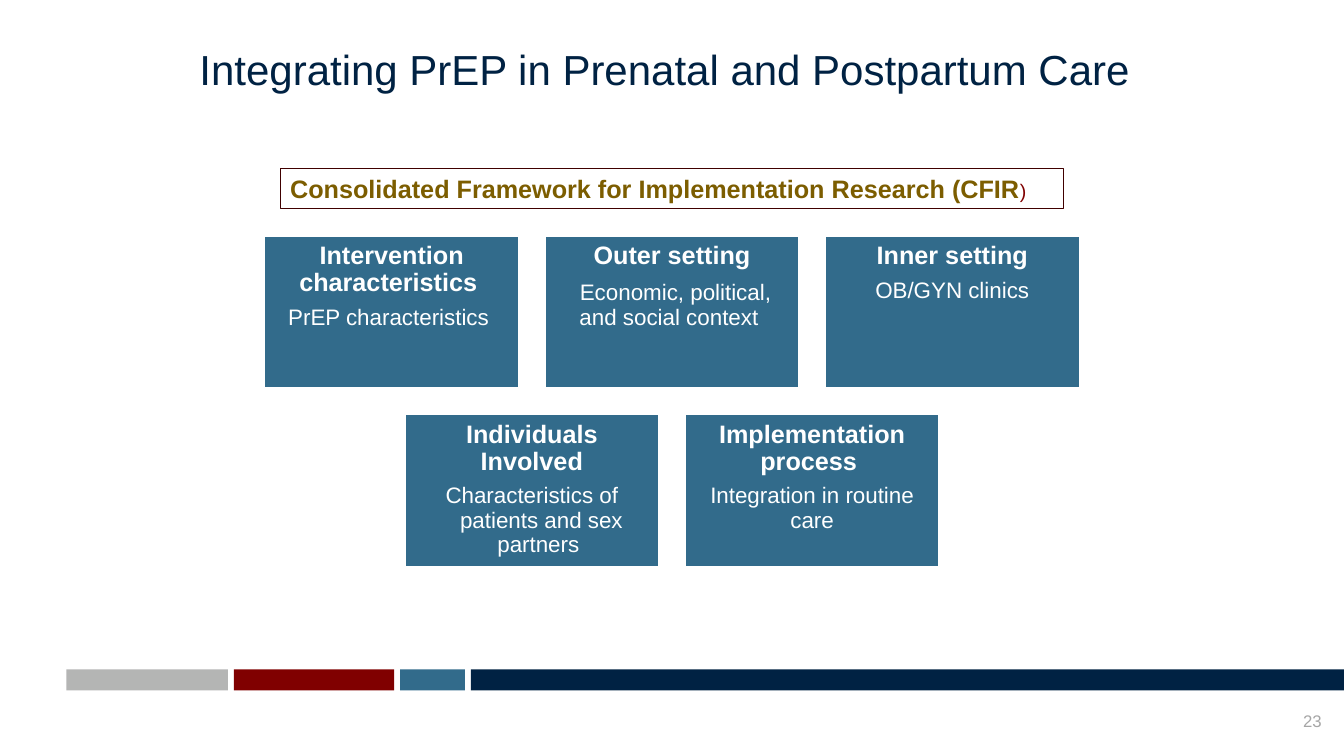
import pptx
import pptx.dml.color
import pptx.enum.shapes
import pptx.enum.text
import pptx.util
from pptx.dml.color import RGBColor
from pptx.enum.text import MSO_ANCHOR, PP_ALIGN
from pptx.util import Inches

NAVY = RGBColor(0x00, 0x22, 0x43)
BLUE = RGBColor(0x32, 0x6B, 0x8B)
RED = RGBColor(0x80, 0x00, 0x00)
DARK_RED = RGBColor(0x40, 0x00, 0x00)
GRAY = RGBColor(0xB4, 0xB5, 0xB4)
NUMBER_GRAY = RGBColor(0xA6, 0xA6, 0xA6)
GOLD = RGBColor(0x7C, 0x5D, 0x00)
WHITE = RGBColor(0xFF, 0xFF, 0xFF)

SLIDE_WIDTH, SLIDE_HEIGHT = 13.33, 7.5
CARD_WIDTH, CARD_HEIGHT = 2.52, 1.51
COLUMN_STEP, ROW_STEP = 2.78, 1.77
CARDS_TOP = 2.34
HANGING_INDENT = 0.19

# Each card: heading, runs of the description as (text, size, bold), hanging
CARD_ROWS = [
    [
        ("Intervention characteristics ", [("PrEP characteristics ", 16, False)], False),
        ("Outer setting", [(" ", 18, True),
                           ("Economic, political, and social context ", 16, False)], False),
        ("Inner setting", [("OB/GYN clinics", 16, False)], False),
    ],
    [
        ("Individuals Involved",
         [("Characteristics of patients and sex partners ", 16, False)], True),
        ("Implementation process ", [("Integration in routine care", 16, False)], False),
    ],
]

# Footer segments: left, width, colour
FOOTER_SEGMENTS = [(0.66, 1.6, GRAY), (2.32, 1.59, RED), (3.97, 0.64, BLUE), (4.67, 8.66, NAVY)]


def add_run(paragraph, text, size, color, bold=False):
    run = paragraph.add_run()
    run.text = text
    run.font.name = "Arial"
    run.font.size = pptx.util.Pt(size)
    run.font.bold = bold
    run.font.color.rgb = color


def set_frame(shape, anchor, horizontal_inset=0.1, vertical_inset=0.05):
    frame = shape.text_frame
    frame.word_wrap = True
    frame.vertical_anchor = anchor
    frame.margin_left = frame.margin_right = Inches(horizontal_inset)
    frame.margin_top = frame.margin_bottom = Inches(vertical_inset)
    return frame


def add_rectangle(slide, left, top, width, height, fill=None, line=None, line_width=1):
    shape = slide.shapes.add_shape(
        pptx.enum.shapes.MSO_SHAPE.RECTANGLE,
        Inches(left), Inches(top), Inches(width), Inches(height))
    shape.shadow.inherit = False
    if fill is None:
        shape.fill.background()
    else:
        shape.fill.solid()
        shape.fill.fore_color.rgb = fill
    if line is None:
        shape.line.fill.background()
    else:
        shape.line.color.rgb = line
        shape.line.width = pptx.util.Pt(line_width)
    return shape


def add_label(slide, left, top, width, height, text, size, color, anchor, alignment, inset):
    box = slide.shapes.add_textbox(Inches(left), Inches(top), Inches(width), Inches(height))
    frame = set_frame(box, anchor, inset, inset)
    paragraph = frame.paragraphs[0]
    paragraph.alignment = alignment
    add_run(paragraph, text, size, color)


def format_card_paragraph(paragraph, space_after):
    paragraph.alignment = PP_ALIGN.CENTER
    paragraph.line_spacing = 0.9
    paragraph.space_after = pptx.util.Pt(space_after)


def add_card(slide, left, top, heading, description, hanging):
    card = add_rectangle(slide, left, top, CARD_WIDTH, CARD_HEIGHT, BLUE, WHITE)
    frame = set_frame(card, MSO_ANCHOR.TOP, 0.07, 0.07)

    heading_paragraph = frame.paragraphs[0]
    format_card_paragraph(heading_paragraph, 6.3)
    add_run(heading_paragraph, heading, 18, WHITE, True)

    paragraph = frame.add_paragraph()
    format_card_paragraph(paragraph, 2.4 if hanging else 5.6)
    if hanging:
        properties = paragraph._p.get_or_add_pPr()
        properties.set("marL", str(Inches(HANGING_INDENT)))
        properties.set("indent", str(-Inches(HANGING_INDENT)))
    for text, size, bold in description:
        add_run(paragraph, text, size, WHITE, bold)


def add_framework_banner(slide):
    banner = add_rectangle(slide, 2.78, 1.67, 7.77, 0.4, line=DARK_RED, line_width=0.75)
    paragraph = set_frame(banner, MSO_ANCHOR.TOP).paragraphs[0]
    paragraph.alignment = PP_ALIGN.LEFT
    add_run(paragraph, "Consolidated Framework for Implementation Research (CFIR", 18, GOLD, True)
    add_run(paragraph, ")", 14, RED)


def main():
    presentation = pptx.Presentation()
    presentation.slide_width = Inches(SLIDE_WIDTH)
    presentation.slide_height = Inches(SLIDE_HEIGHT)
    slide = presentation.slides.add_slide(presentation.slide_layouts[6])

    # Footer band and page number
    for left, width, color in FOOTER_SEGMENTS:
        add_rectangle(slide, left, 6.64, width, 0.21, color)
    add_label(slide, 12.77, 7.05, 0.34, 0.2, "23", 12, NUMBER_GRAY,
              MSO_ANCHOR.BOTTOM, PP_ALIGN.RIGHT, 0)

    # Title
    add_label(slide, 1.88, -0.04, 9.95, 1.45, "Integrating PrEP in Prenatal and Postpartum Care",
              30, NAVY, MSO_ANCHOR.MIDDLE, PP_ALIGN.LEFT, 0.1)

    # Framework name
    add_framework_banner(slide)

    # Framework domains, each row centred on the slide
    for row, cards in enumerate(CARD_ROWS):
        row_width = (len(cards) - 1) * COLUMN_STEP + CARD_WIDTH
        row_left = (SLIDE_WIDTH - row_width) / 2
        for column, card in enumerate(cards):
            add_card(slide, row_left + column * COLUMN_STEP, CARDS_TOP + row * ROW_STEP, *card)

    presentation.save("out.pptx")


if __name__ == "__main__":
    main()
